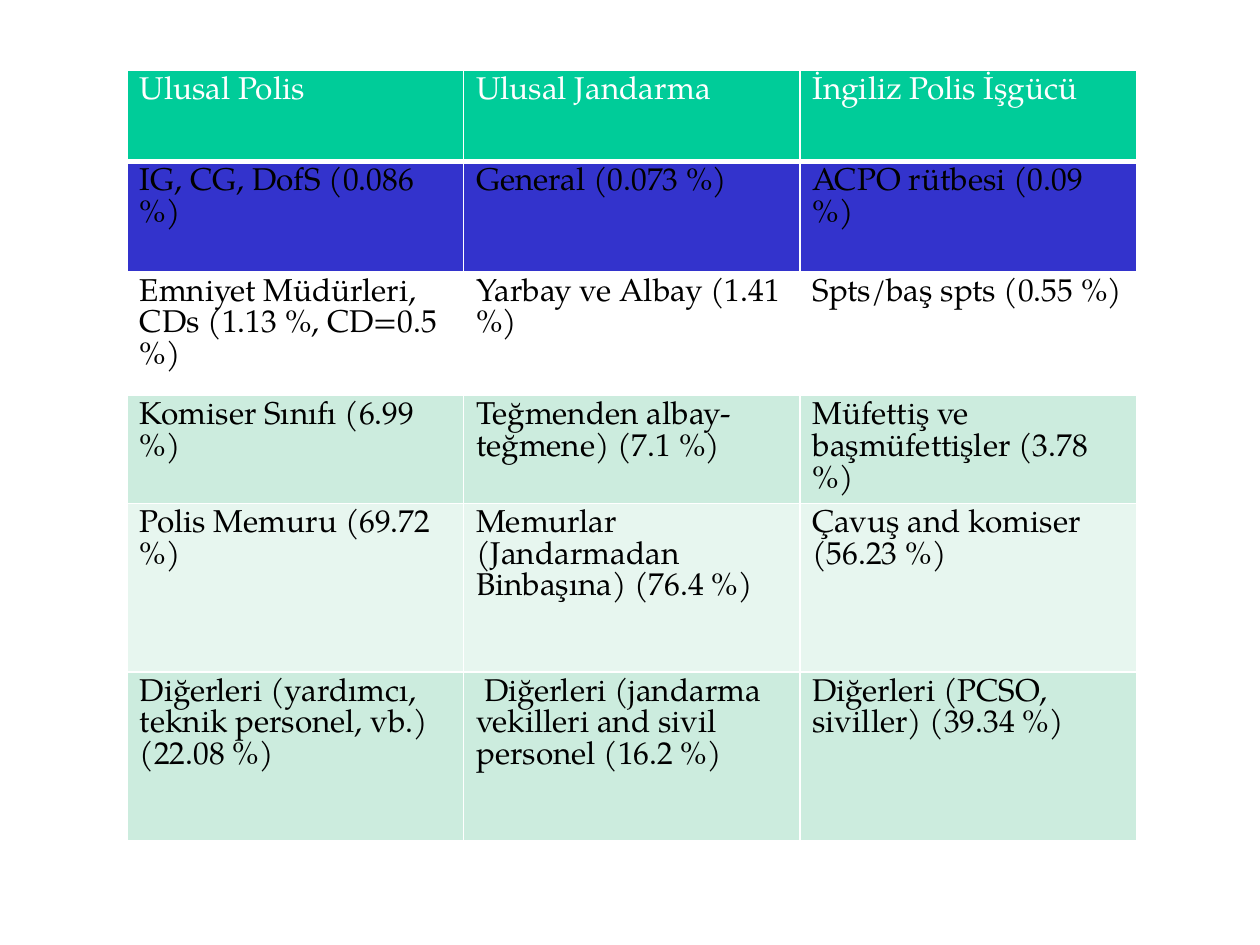
from lxml import etree
from pptx import Presentation
from pptx.dml.color import RGBColor
from pptx.oxml.ns import qn
from pptx.util import Inches, Pt

WHITE = RGBColor(0xFF, 0xFF, 0xFF)
BLACK = RGBColor(0x00, 0x00, 0x00)
GREEN = RGBColor(0x00, 0xCC, 0x99)
BLUE = RGBColor(0x33, 0x33, 0xCC)
MINT = RGBColor(0xCC, 0xEC, 0xDE)
PALE_MINT = RGBColor(0xE7, 0xF6, 0xEF)
FONT = "TeX Gyre Pagella"

# Row height in inches, fill, text colour, cell texts
RANKS = [
    (0.72, GREEN, WHITE,
     ["Ulusal Polis", "Ulusal Jandarma", "İngiliz Polis İşgücü"]),
    (0.88, BLUE, BLACK,
     ["IG, CG, DofS (0.086 %)", "General (0.073 %)", "ACPO rütbesi (0.09 %)"]),
    (0.98, WHITE, BLACK,
     ["Emniyet Müdürleri, CDs (1.13 %, CD=0.5 %)",
      "Yarbay ve Albay (1.41 %)", "Spts/baş spts (0.55 %)"]),
    (0.81, MINT, BLACK,
     ["Komiser Sınıfı (6.99 %)", "Teğmenden albay-teğmene) (7.1 %)",
      "Müfettiş ve başmüfettişler (3.78 %)"]),
    (1.34, PALE_MINT, BLACK,
     ["Polis Memuru (69.72 %)", "Memurlar (Jandarmadan Binbaşına) (76.4 %)",
      "Çavuş and komiser (56.23 %)"]),
    (1.34, MINT, BLACK,
     ["Diğerleri (yardımcı, teknik personel, vb.) (22.08 %)",
      " Diğerleri (jandarma vekilleri and sivil personel (16.2 %)",
      "Diğerleri (PCSO, siviller) (39.34 %)"]),
]


def add_borders(cell, bottom_width):
    """Draw white borders, 1 pt on every side but the bottom."""
    properties = cell._tc.get_or_add_tcPr()
    for side in ("lnL", "lnR", "lnT", "lnB"):
        width = bottom_width if side == "lnB" else 1
        line = etree.SubElement(properties, qn(f"a:{side}"), w=str(Pt(width)))
        fill = etree.SubElement(line, qn("a:solidFill"))
        etree.SubElement(fill, qn("a:srgbClr"), val=str(WHITE))


prs = Presentation()
prs.slide_width, prs.slide_height = Inches(10), Inches(7.5)
slide = prs.slides.add_slide(prs.slide_layouts[6])

total_height = sum(height for height, *_ in RANKS)
table = slide.shapes.add_table(
    len(RANKS), 3, Inches(1.01), Inches(0.56), Inches(8.01), Inches(total_height)
).table

for row_index, (height, fill_color, text_color, texts) in enumerate(RANKS):
    table.rows[row_index].height = Inches(height)
    for column_index, text in enumerate(texts):
        cell = table.cell(row_index, column_index)
        add_borders(cell, bottom_width=3 if row_index == 0 else 1)
        cell.fill.solid()
        cell.fill.fore_color.rgb = fill_color
        cell.text_frame.text = text
        font = cell.text_frame.paragraphs[0].runs[0].font
        font.name, font.size, font.bold = FONT, Pt(18), False
        font.color.rgb = text_color

prs.save("out.pptx")
